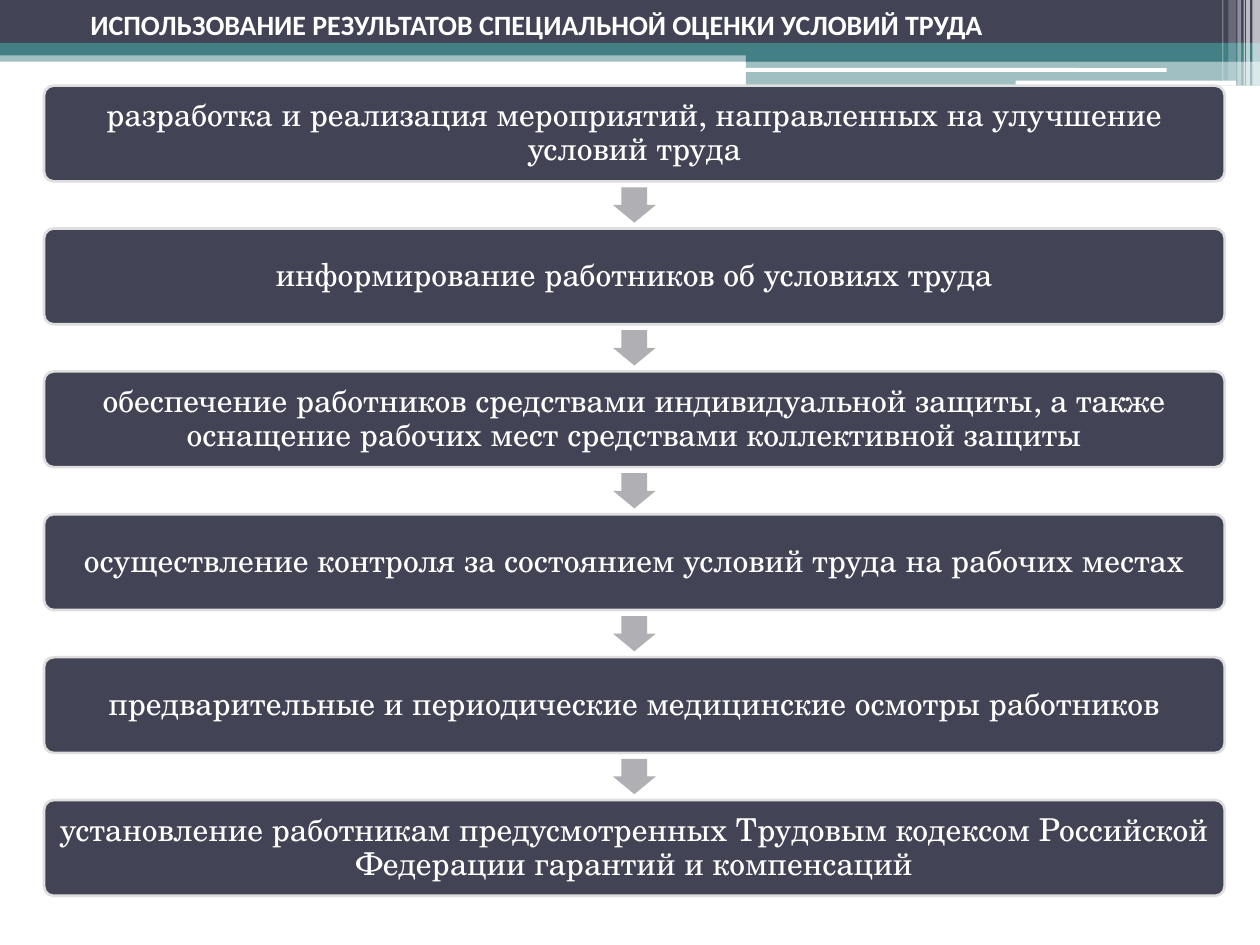
from lxml.etree import SubElement
from pptx import Presentation
from pptx.dml.color import RGBColor
from pptx.enum.shapes import MSO_SHAPE
from pptx.enum.text import MSO_ANCHOR, PP_ALIGN
from pptx.oxml.ns import qn
from pptx.util import Inches, Pt

TITLE = "ИСПОЛЬЗОВАНИЕ РЕЗУЛЬТАТОВ СПЕЦИАЛЬНОЙ ОЦЕНКИ УСЛОВИЙ ТРУДА"
STEPS = [
    "разработка и реализация мероприятий, направленных на улучшение условий труда",
    "информирование работников об условиях труда",
    "обеспечение работников средствами индивидуальной защиты, а также оснащение рабочих мест средствами коллективной защиты",
    "осуществление контроля за состоянием условий труда на рабочих местах",
    "предварительные и периодические медицинские осмотры работников",
    "установление работникам предусмотренных Трудовым кодексом Российской Федерации гарантий и компенсаций",
]
NAVY, TEAL, WHITE, GREY, EDGE = "424456", "438086", "FFFFFF", "B0B0B4", "DEDEDE"
BANDS = [
    (0, 0.4, 10, 0.09, TEAL, 50),
    (0, 0, 10, 0.34, NAVY, 100),
    (0, 0.34, 10, 0.1, TEAL, 100),
    (5.92, 0.39, 4.08, 0.1, TEAL, 100),
    (5.92, 0.48, 4.08, 0.2, TEAL, 50),
]
BARS = [(5.91, 0.54, 3.35, 0.03), (8.06, 0.64, 1.75, 0.04)]
STRIPES = [
    (9.94, 0.06, 0.68, 65),
    (9.89, 0.03, 0.68, 65),
    (9.87, 0.01, 0.68, 60),
    (9.82, 0.03, 0.68, 40),
    (9.75, 0.06, 0.64, 20),
    (9.7, 0.01, 0.64, 30),
]
TITLE_FONT = {"name": "Calibri", "size": Pt(16), "bold": True}
STEP_FONT = {"name": "TeX Gyre Schola", "size": Pt(18)}
STEP_PARA = {"alignment": PP_ALIGN.CENTER, "line_spacing": 0.9}
LEFT, TOP, WIDTH, HEIGHT, PITCH = 0.35, 0.68, 9.37, 0.76, 1.134
ARROW_W, ARROW_H = 0.34, 0.28


def rgb(color):
    """Turn a hex string into a colour."""
    return RGBColor.from_string(color)


def add_block(s, kind, box, color, alpha=100, adj=()):
    """Add a filled shape without outline or shadow."""
    sp = s.shapes.add_shape(kind, *map(Inches, box))
    sp.shadow.inherit = False
    sp.fill.solid()
    sp.fill.fore_color.rgb = rgb(color)
    sp.line.fill.background()
    for i, value in enumerate(adj):
        sp.adjustments[i] = value
    if alpha < 100:
        clr = sp.fill._xPr.find(qn("a:solidFill")).find(qn("a:srgbClr"))
        SubElement(clr, qn("a:alpha")).set("val", str(alpha * 1000))
    return sp


def set_text(sp, text, font, para, margin):
    """Write one white paragraph, centred vertically."""
    tf = sp.text_frame
    frame = {"word_wrap": True, "vertical_anchor": MSO_ANCHOR.MIDDLE}
    for side in ("left", "right", "top", "bottom"):
        frame[f"margin_{side}"] = Inches(margin[side in ("top", "bottom")])
    p = tf.paragraphs[0]
    r = p.add_run()
    r.text = text
    r.font.color.rgb = rgb(WHITE)
    for target, values in ((tf, frame), (p, para), (r.font, font)):
        for name, value in values.items():
            setattr(target, name, value)


def add_header(s):
    """Draw the header bands, bars, stripes and title."""
    for *box, color, alpha in BANDS:
        add_block(s, MSO_SHAPE.RECTANGLE, box, color, alpha)
    for box in BARS:
        add_block(s, MSO_SHAPE.ROUNDED_RECTANGLE, box, WHITE)
    for x, w, h, alpha in STRIPES:
        add_block(s, MSO_SHAPE.RECTANGLE, (x, 0, w, h), WHITE, alpha)
    title = s.shapes.add_textbox(*map(Inches, (0.62, 0, 9, 0.39)))
    set_text(title, TITLE, TITLE_FONT, {"alignment": PP_ALIGN.LEFT}, (0.1, 0.05))


def add_steps(s):
    """Stack the steps with an arrow in each gap."""
    for i, text in enumerate(STEPS):
        y = TOP + i * PITCH
        if i:
            gap = PITCH - HEIGHT
            box = (LEFT + (WIDTH - ARROW_W) / 2, y - (gap + ARROW_H) / 2, ARROW_W, ARROW_H)
            add_block(s, MSO_SHAPE.DOWN_ARROW, box, GREY, adj=(0.6, 0.5))
        sp = add_block(s, MSO_SHAPE.ROUNDED_RECTANGLE, (LEFT, y, WIDTH, HEIGHT), NAVY, adj=(0.1,))
        sp.line.color.rgb = rgb(EDGE)
        sp.line.width = Pt(1.5)
        set_text(sp, text, STEP_FONT, STEP_PARA, (0.07, 0.07))


def main():
    """Build and save the slide."""
    prs = Presentation()
    prs.slide_width, prs.slide_height = Inches(10), Inches(7.5)
    s = prs.slides.add_slide(prs.slide_layouts[6])
    add_header(s)
    add_steps(s)
    prs.save("out.pptx")


if __name__ == "__main__":
    main()
